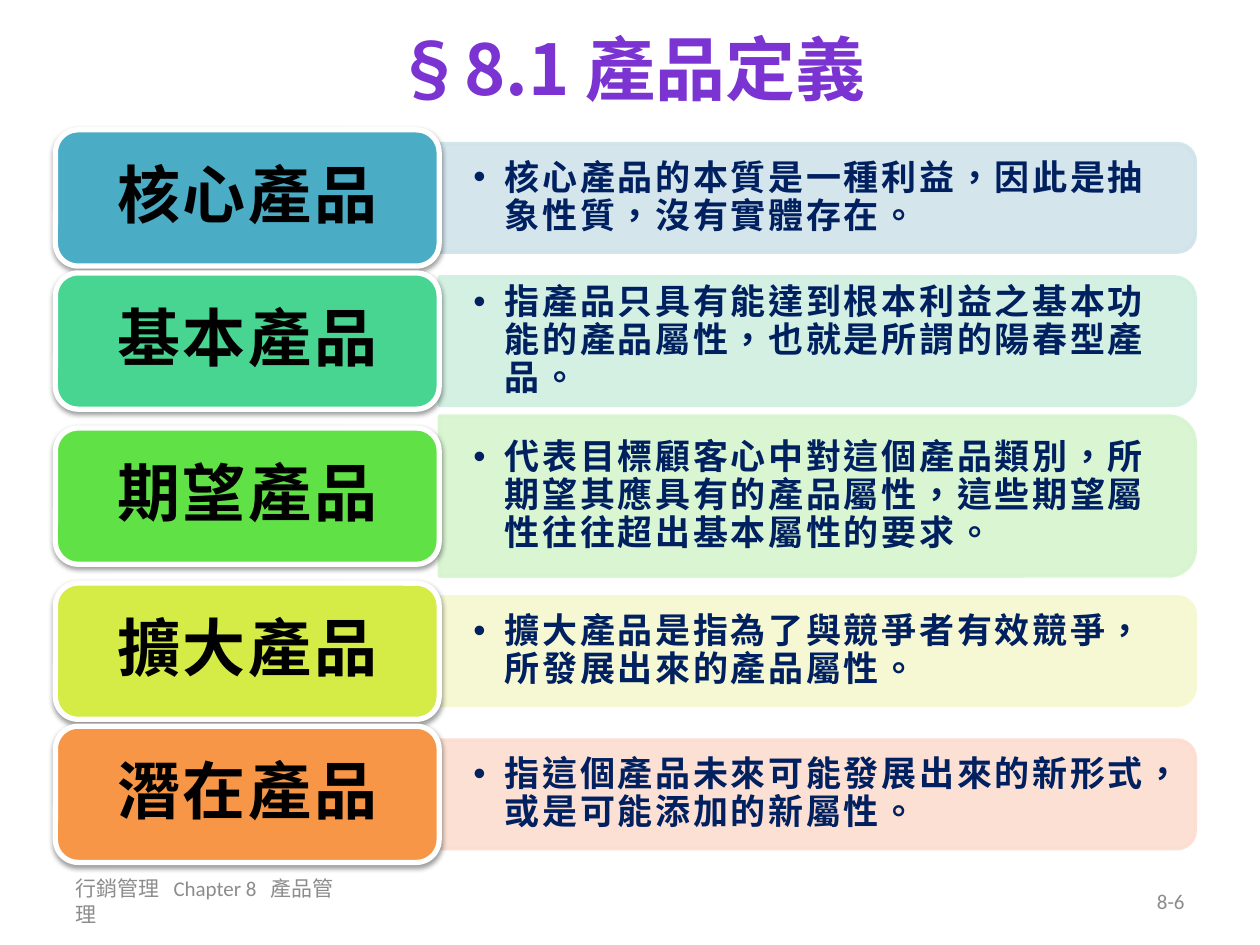
from dataclasses import dataclass

from lxml import etree
from pptx import Presentation
from pptx.dml.color import RGBColor
from pptx.enum.lang import MSO_LANGUAGE_ID
from pptx.enum.shapes import MSO_SHAPE
from pptx.enum.text import MSO_ANCHOR, PP_ALIGN
from pptx.oxml.ns import qn
from pptx.util import Pt

ROUNDED = MSO_SHAPE.ROUNDED_RECTANGLE
ROUNDED_SIDE = MSO_SHAPE.ROUND_2_SAME_RECTANGLE
LEFT, CENTER, RIGHT = PP_ALIGN.LEFT, PP_ALIGN.CENTER, PP_ALIGN.RIGHT
MIDDLE = MSO_ANCHOR.MIDDLE
CHINESE = MSO_LANGUAGE_ID.TRADITIONAL_CHINESE


@dataclass(frozen=True)
class Theme:
    latin: str = "Calibri"
    asian: str = "Noto Sans CJK SC"
    title: str = "7B34D2"
    label: str = "000000"
    body: str = "002060"
    footer: str = "8C8C8C"
    white: str = "FFFFFF"
    title_size: float = 40
    label_size: float = 36
    body_size: float = 20
    footer_size: float = 12


THEME = Theme()
LABEL_HEIGHT = 77.8
ROW_GAP = 4

# Label, label colour, panel colour, panel height, description
LEVELS = [
    ("核心產品", "4BACC6", "D0E3EA", 62,
     "核心產品的本質是一種利益，因此是抽象性質，沒有實體存在。"),
    ("基本產品", "48D491", "CFEFE1", 73.5,
     "指產品只具有能達到根本利益之基本功能的產品屬性，也就是所謂的陽春型產品。"),
    ("期望產品", "60E146", "D6F4CE", 91.4,
     "代表目標顧客心中對這個產品類別，所期望其應具有的產品屬性，這些期望屬性往往超出基本屬性的要求。"),
    ("擴大產品", "D5EC46", "F6F8CF", 62,
     "擴大產品是指為了與競爭者有效競爭，所發展出來的產品屬性。"),
    ("潛在產品", "F79646", "FCDDCF", 62,
     "指這個產品未來可能發展出來的新形式，或是可能添加的新屬性。"),
]


def add_child(parent, tag, **attributes):
    child = etree.SubElement(parent, qn(tag))
    for name, value in attributes.items():
        child.set(name, str(value))
    return child


def write_text(shape, text, *, size, color, font=THEME.latin, bold=False, align=LEFT,
               insets=(7.2, 3.6), tracking=0, line_spacing=None, bullet_indent=0):
    frame = shape.text_frame
    frame.word_wrap = True
    frame.vertical_anchor = MIDDLE
    frame.margin_left = frame.margin_right = Pt(insets[0])
    frame.margin_top = frame.margin_bottom = Pt(insets[1])
    para = frame.paragraphs[0]
    para.alignment = align
    if line_spacing:
        para.line_spacing = line_spacing
    if bullet_indent:
        properties = para._p.get_or_add_pPr()
        properties.set("marL", str(Pt(bullet_indent)))
        properties.set("indent", str(-Pt(bullet_indent)))
        add_child(properties, "a:buFont", typeface="Arial")
        add_child(properties, "a:buChar", char="•")
    span = para.add_run()
    span.text = text
    span.font.size = Pt(size)
    span.font.bold = bold
    span.font.name = font
    span.font.language_id = CHINESE
    span.font.color.rgb = RGBColor.from_string(color)
    run_properties = span._r.get_or_add_rPr()
    add_child(run_properties, "a:ea", typeface=THEME.asian)
    if tracking:
        run_properties.set("spc", str(round(tracking * 100)))


def add_text(page, box, text, **style):
    write_text(page.shapes.add_textbox(*map(Pt, box)), text, **style)


def add_block(page, preset, box, fill, line, line_width):
    shape = page.shapes.add_shape(preset, *map(Pt, box))
    shape.shadow.inherit = False
    shape.fill.solid()
    shape.fill.fore_color.rgb = RGBColor.from_string(fill)
    shape.line.color.rgb = RGBColor.from_string(line)
    shape.line.width = Pt(line_width)
    return shape


def add_panel(page, box, color, text):
    """Panel rounded on its right side, with one bulleted description."""
    left, top, width, height = box
    # The preset rounds its top, so it is laid on its side about its centre
    upright = (left + (width - height) / 2, top + (height - width) / 2, height, width)
    panel = add_block(page, ROUNDED_SIDE, upright, color, color, 2)
    panel.rotation = 90
    for rgb in panel._element.spPr.iter(qn("a:srgbClr")):
        add_child(rgb, "a:alpha", val=90000)
    add_text(page, (left, top + 3, width - 3, height - 6), text,
             size=THEME.body_size, color=THEME.body, bold=True, tracking=1.5,
             insets=(19.5, 10), line_spacing=0.9, bullet_indent=18)


def add_label(page, box, color, text):
    label = add_block(page, ROUNDED, box, color, THEME.white, 3)
    effects = label._element.spPr.find(qn("a:effectLst"))
    shadow = add_child(effects, "a:outerShdw", blurRad=Pt(3.1), dist=Pt(1.6),
                       dir=5400000, rotWithShape=0)
    add_child(add_child(shadow, "a:srgbClr", val="000000"), "a:alpha", val=38000)
    write_text(label, text, size=THEME.label_size, color=THEME.label, bold=True,
               align=CENTER, tracking=1.5, insets=(14.5, 9), line_spacing=0.9)


def add_levels(page, box):
    """Stack the product levels; each row is as high as its taller part."""
    left, top, width, _ = box
    label_width = 219.3
    for name, label_color, panel_color, panel_height, text in LEVELS:
        row_height = max(LABEL_HEIGHT, panel_height)
        panel_top = top + (row_height - panel_height) / 2
        label_top = top + (row_height - LABEL_HEIGHT) / 2
        add_panel(page, (left + label_width, panel_top, width - label_width, panel_height),
                  panel_color, text)
        add_label(page, (left, label_top, label_width, LABEL_HEIGHT), label_color, name)
        top += row_height + ROW_GAP


def add_footer(page, box):
    left, top, width, height = box
    part_width = 168
    style = dict(size=THEME.footer_size, color=THEME.footer)
    add_text(page, (left, top, part_width, height), "行銷管理   Chapter 8   產品管理", **style)
    add_text(page, (left + width - part_width, top, part_width, height), "8-6",
             align=RIGHT, **style)


def main():
    deck = Presentation()
    deck.slide_width, deck.slide_height = Pt(720), Pt(540)
    page = deck.slides.add_slide(deck.slide_layouts[6])
    # Title
    add_text(page, (36, 0, 648, 77), "§8.1 產品定義", size=THEME.title_size,
             color=THEME.title, font=THEME.asian, bold=True, align=CENTER)
    # Product levels
    add_levels(page, (31.7, 74.2, 651.3, 418.3))
    # Footer and page number
    add_footer(page, (36, 500.5, 648, 28.8))
    deck.save("out.pptx")


if __name__ == "__main__":
    main()
